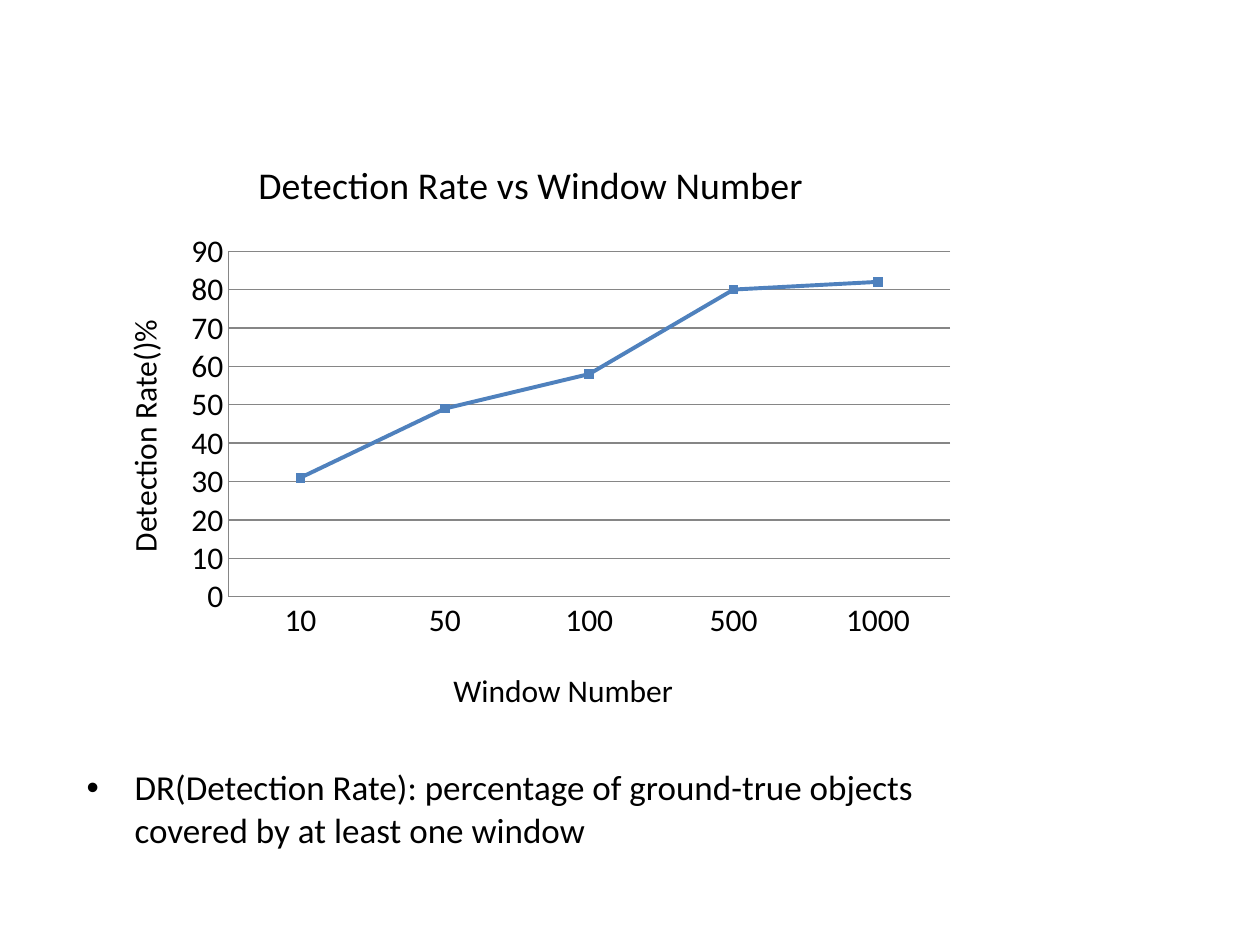
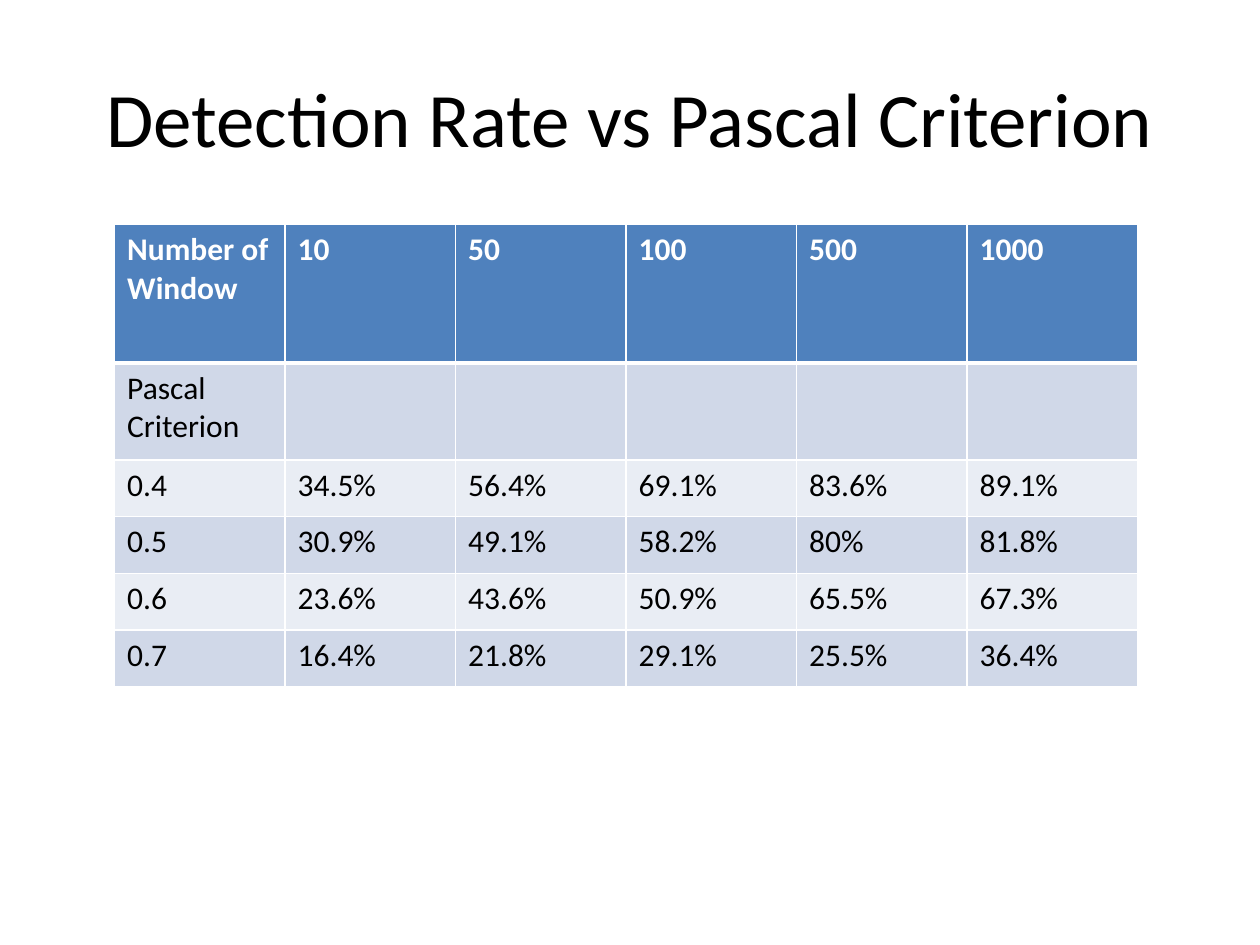
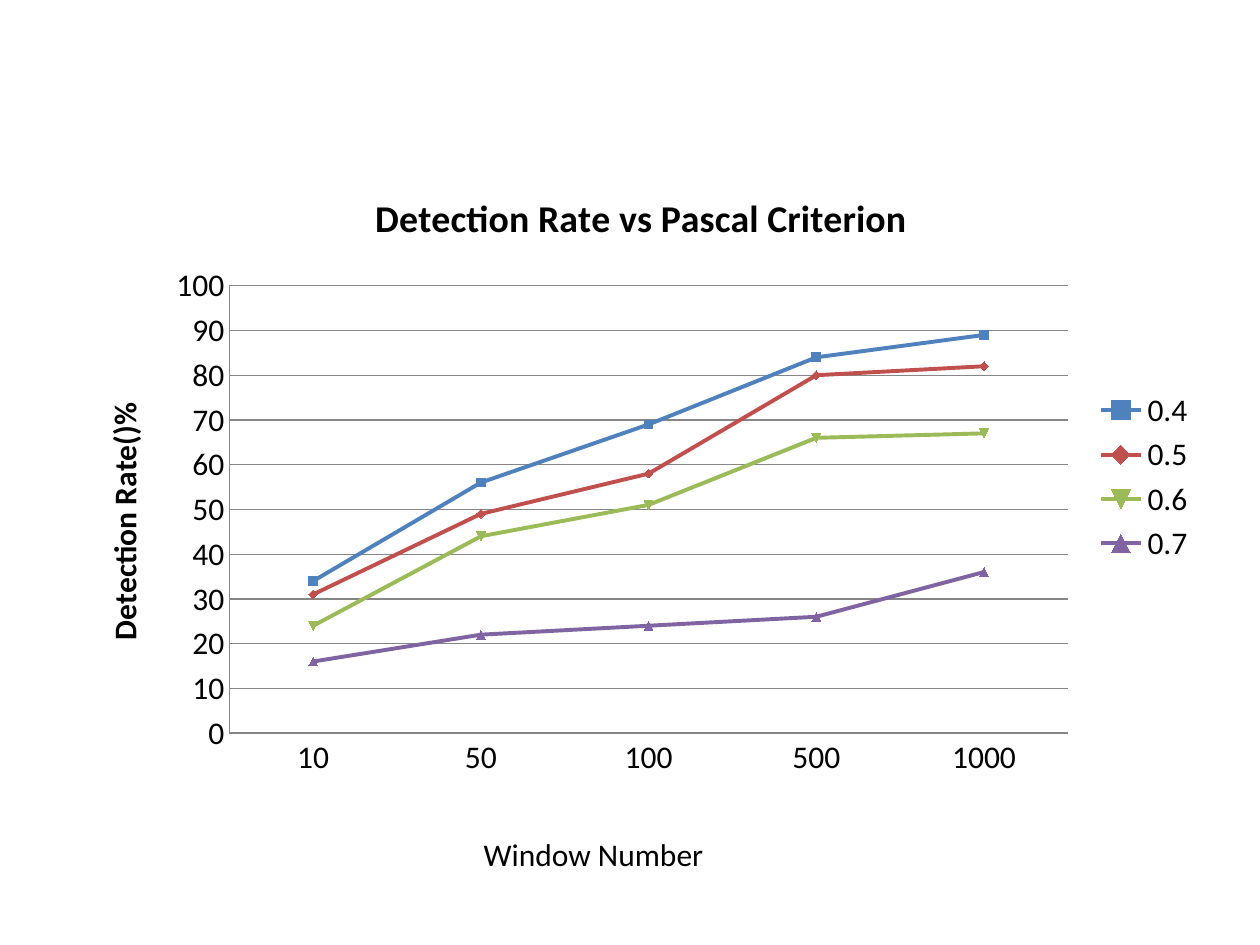
"""Build three slides on detection rate against window number and Pascal criterion."""
from itertools import product

from lxml import etree
from pptx import Presentation, util as u
from pptx.chart import data as chart_data
from pptx.dml.color import RGBColor
from pptx.enum import chart as ch, text
from pptx.oxml import ns

FONT = "Calibri"
BLACK, WHITE, GRID = "000000", "FFFFFF", "868686"
BLUE, RED, GREEN, PURPLE = "4F81BD", "C0504D", "9BBB59", "8064A2"
BANDS = ("D0D8E8", "E9EDF4")
BODY_SIZE = 18
WINDOWS = ["10", "50", "100", "500", "1000"]
X_TITLE, Y_TITLE = "Window Number", "Detection Rate()%"
CRITERION_TITLE = "Detection Rate vs Pascal Criterion"

WINDOW_CHART = {
    "title": "Detection Rate vs Window Number",
    "box": (0.75, 1.07, 6.93, 4.09),
    "x_title_at": (3.5, 5.28),
    "top": 90,
    "bold": False,
    "rates": [("Series 1", [31, 49, 58, 80, 82], BLUE)],
}
CRITERION_CHART = {
    "title": CRITERION_TITLE,
    "box": (0.59, 1.31, 9, 4.95),
    "x_title_at": (3.74, 6.58),
    "top": 100,
    "bold": True,
    "rates": [
        ("0.4", [34, 56, 69, 84, 89], BLUE),
        ("0.5", [31, 49, 58, 80, 82], RED),
        ("0.6", [24, 44, 51, 66, 67], GREEN),
        ("0.7", [16, 22, 24, 26, 36], PURPLE),
    ],
}
DEFINITION = ("DR(Detection Rate): percentage of ground-true objects "
              "covered by at least one window")
RATE_ROWS = [
    ["Number of Window", *WINDOWS],
    ["Pascal Criterion", "", "", "", "", ""],
    ["0.4", "34.5%", "56.4%", "69.1%", "83.6%", "89.1%"],
    ["0.5", "30.9%", "49.1%", "58.2%", "80%", "81.8%"],
    ["0.6", "23.6%", "43.6%", "50.9%", "65.5%", "67.3%"],
    ["0.7", "16.4%", "21.8%", "29.1%", "25.5%", "36.4%"],
]
ROW_HEIGHTS = [1.1, 0.77] + [0.45] * 4
TABLE_BOX = (0.91, 1.78, 8.12, sum(ROW_HEIGHTS))


def rgb(value):
    return RGBColor.from_string(value)


def inches(values):
    return [u.Inches(value) for value in values]


def apply(target, **formats):
    for name, value in formats.items():
        setattr(target, name, value)


def style_font(font, size=BODY_SIZE, color=BLACK, bold=False):
    apply(font, name=FONT, size=u.Pt(size), bold=bold)
    font.color.rgb = rgb(color)


def add_text(slide, box, words, size=BODY_SIZE, align=text.PP_ALIGN.LEFT, **frame_formats):
    frame = slide.shapes.add_textbox(*inches(box)).text_frame
    apply(frame, word_wrap=True, **frame_formats)
    paragraph = frame.paragraphs[0]
    paragraph.alignment = align
    run = paragraph.add_run()
    run.text = words
    style_font(run.font, size)
    return paragraph


def add_bullet(paragraph):
    paragraph.space_before = u.Pt(4)
    properties = paragraph._p.get_or_add_pPr()
    indent = u.Inches(0.38)
    properties.set("marL", str(indent))
    properties.set("indent", str(-indent))
    for tag, key, value in (("a:buFont", "typeface", "Arial"), ("a:buChar", "char", "•")):
        etree.SubElement(properties, ns.qn(tag)).set(key, value)


def set_title(owner, words, size, bold):
    frame = owner.text_frame
    frame.text = words
    style_font(frame.paragraphs[0].runs[0].font, size, bold=bold)


def add_rate_chart(slide, content):
    rates = chart_data.CategoryChartData()
    rates.categories = WINDOWS
    for name, values, _ in content["rates"]:
        rates.add_series(name, values)
    chart = slide.shapes.add_chart(
        ch.XL_CHART_TYPE.LINE_MARKERS, *inches(content["box"]), rates).chart
    style_font(chart.font)
    chart.has_title = True
    set_title(chart.chart_title, content["title"], 21.6, content["bold"])
    chart.has_legend = len(content["rates"]) > 1
    if chart.has_legend:
        apply(chart.legend, position=ch.XL_LEGEND_POSITION.RIGHT, include_in_layout=False)

    rate_axis = chart.value_axis
    apply(rate_axis, minimum_scale=0, maximum_scale=content["top"], major_unit=10,
          has_major_gridlines=True)
    set_title(rate_axis.axis_title, Y_TITLE, BODY_SIZE, content["bold"])
    for axis in (rate_axis, chart.category_axis):
        axis.major_tick_mark = ch.XL_TICK_MARK.NONE
        axis.format.line.color.rgb = rgb(GRID)
    rate_axis.major_gridlines.format.line.color.rgb = rgb(GRID)

    plot = chart.plots[0]
    plot.vary_by_categories = False
    for series, (_, _, color) in zip(plot.series, content["rates"]):
        series.smooth = False
        line = series.format.line
        line.width = u.Pt(2.25)
        line.color.rgb = rgb(color)
        marker = series.marker.format
        marker.fill.solid()
        marker.fill.fore_color.rgb = rgb(color)
        marker.line.color.rgb = rgb(color)
    add_text(slide, (*content["x_title_at"], 2.28, 0.4), X_TITLE,
             auto_size=text.MSO_AUTO_SIZE.SHAPE_TO_FIT_TEXT)


def add_borders(cell, widths):
    properties = cell._tc.get_or_add_tcPr()
    for side, width in widths.items():
        border = etree.SubElement(properties, ns.qn(f"a:ln{side}"), w=str(u.Pt(width)))
        fill = etree.SubElement(border, ns.qn("a:solidFill"))
        etree.SubElement(fill, ns.qn("a:srgbClr"), val=WHITE)


def add_rate_table(slide):
    row_count, column_count = len(RATE_ROWS), len(RATE_ROWS[0])
    table = slide.shapes.add_table(row_count, column_count, *inches(TABLE_BOX)).table
    for row, height in zip(table.rows, ROW_HEIGHTS):
        row.height = u.Inches(height)
    for column in table.columns:
        column.width = u.Inches(TABLE_BOX[2] / column_count)
    for r, c in product(range(row_count), range(column_count)):
        cell, header = table.cell(r, c), r == 0
        add_borders(cell, {"L": 1, "R": 1, "T": 3 if r == 1 else 1, "B": 3 if header else 1})
        cell.fill.solid()
        cell.fill.fore_color.rgb = rgb(BLUE if header else BANDS[(r - 1) % 2])
        cell.text = RATE_ROWS[r][c]
        style_font(cell.text_frame.paragraphs[0].font,
                   color=WHITE if header else BLACK, bold=header)
        for run in cell.text_frame.paragraphs[0].runs:
            style_font(run.font, color=WHITE if header else BLACK, bold=header)


def main():
    deck = Presentation()
    apply(deck, slide_width=u.Inches(10), slide_height=u.Inches(7.5))
    window_slide, table_slide, criterion_slide = (
        deck.slides.add_slide(deck.slide_layouts[6]) for _ in range(3))

    add_bullet(add_text(window_slide, (0.59, 6.03, 7.4, 1.02), DEFINITION, 20))
    add_rate_chart(window_slide, WINDOW_CHART)

    add_text(table_slide, (0.5, 0.3, 9, 1.25), CRITERION_TITLE, 44,
             text.PP_ALIGN.CENTER, vertical_anchor=text.MSO_ANCHOR.MIDDLE)
    add_rate_table(table_slide)

    add_rate_chart(criterion_slide, CRITERION_CHART)
    deck.save("out.pptx")


if __name__ == "__main__":
    main()
